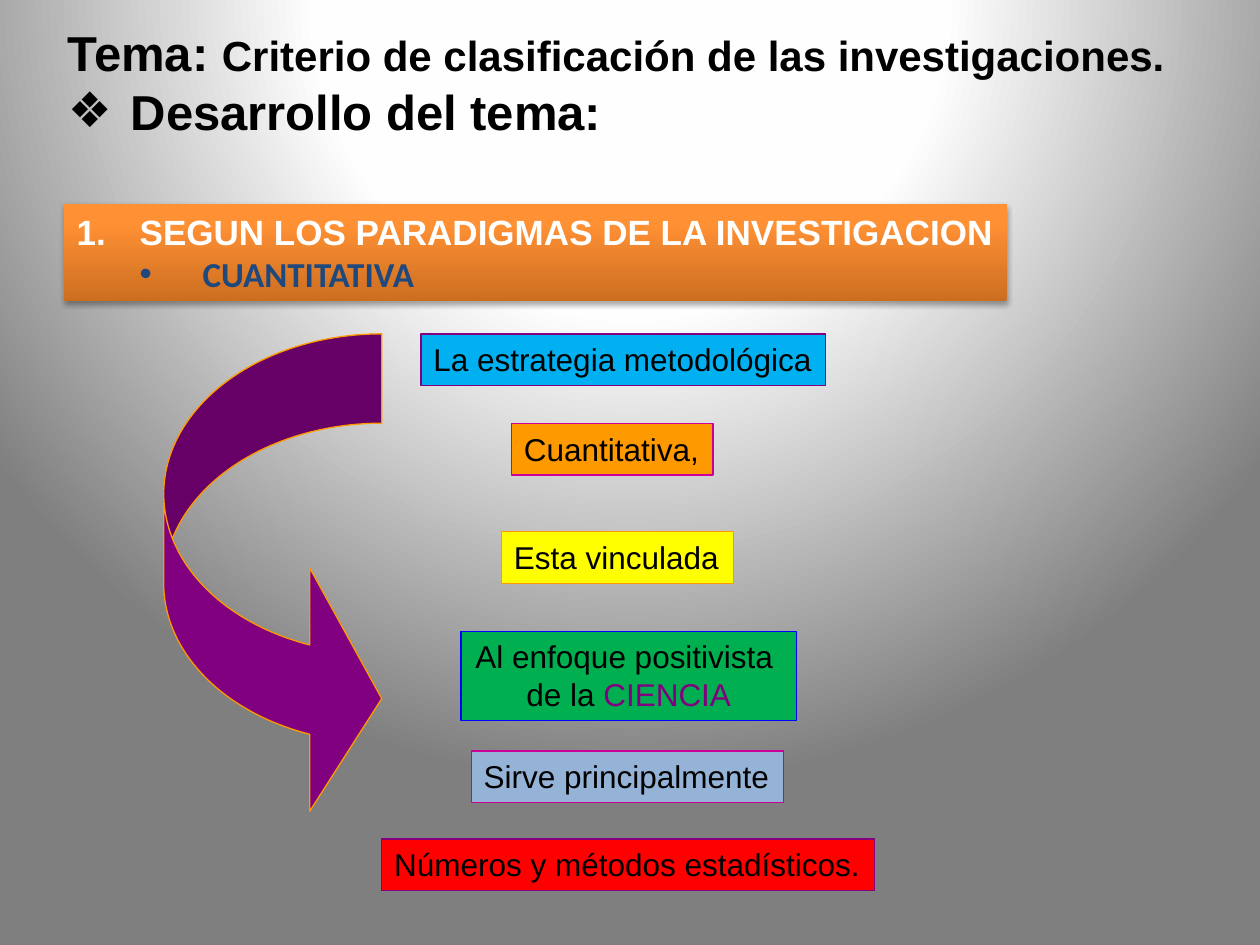
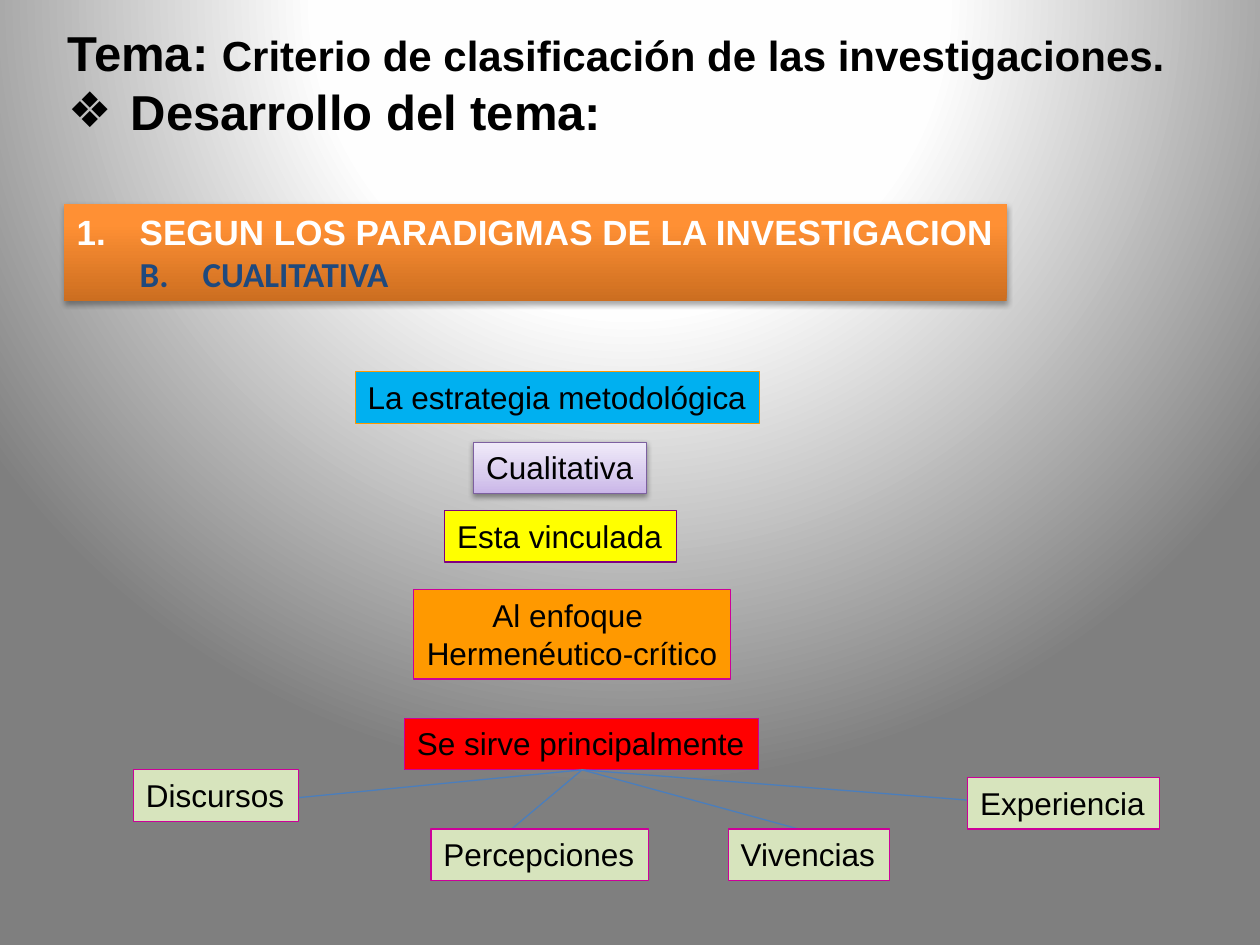
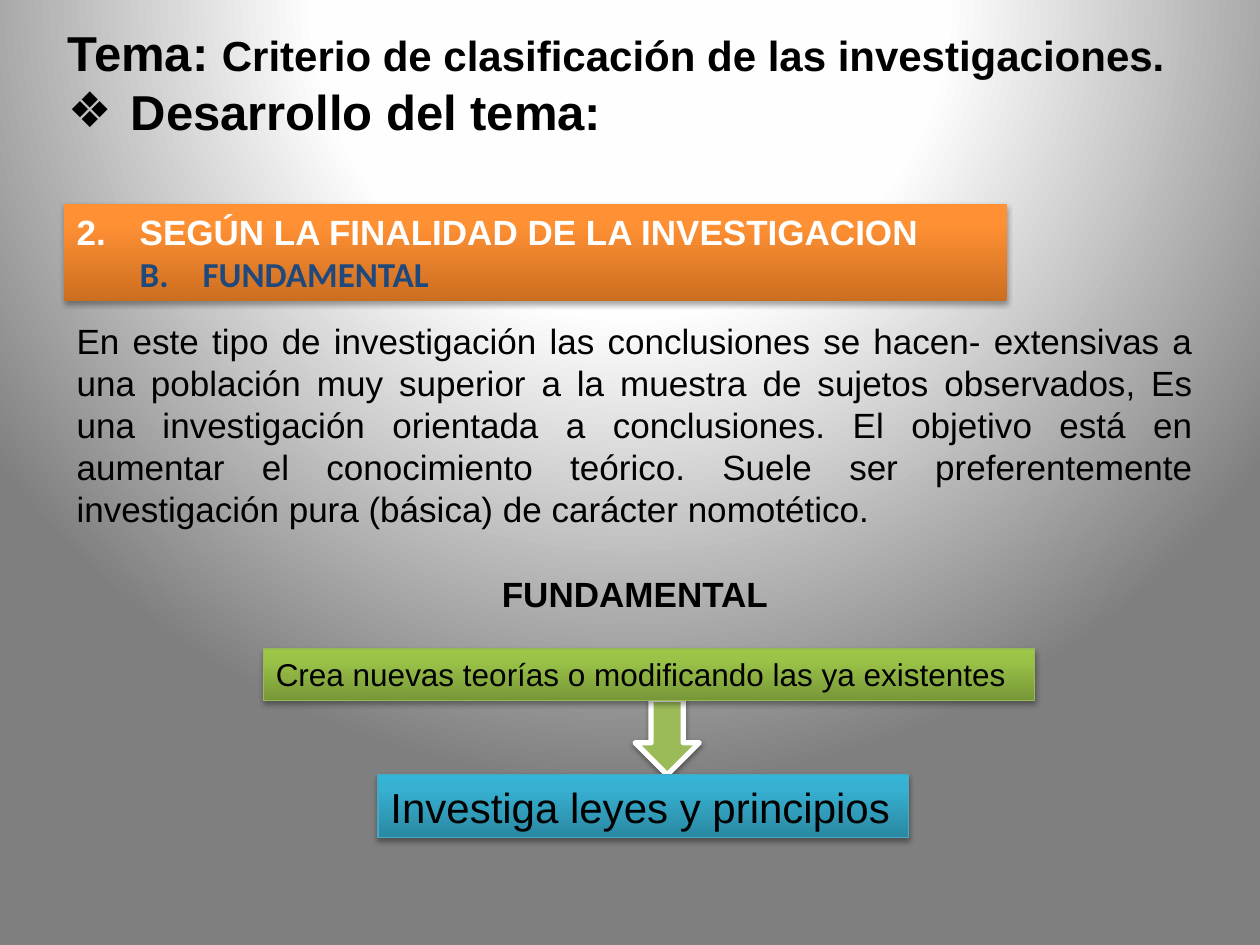
from dataclasses import dataclass

from lxml import etree
from pptx import Presentation
from pptx.dml.color import RGBColor
from pptx.enum.shapes import MSO_CONNECTOR, MSO_SHAPE
from pptx.enum.text import MSO_AUTO_SIZE, PP_ALIGN
from pptx.oxml.ns import qn
from pptx.util import Inches, Pt

LEFT, CENTER, JUSTIFY = PP_ALIGN.LEFT, PP_ALIGN.CENTER, PP_ALIGN.JUSTIFY
FIT_SHAPE = MSO_AUTO_SIZE.SHAPE_TO_FIT_TEXT
STRAIGHT = MSO_CONNECTOR.STRAIGHT
CURVED_ARROW, DOWN_ARROW = MSO_SHAPE.CURVED_RIGHT_ARROW, MSO_SHAPE.DOWN_ARROW


@dataclass(frozen=True)
class Theme:
    font: str = "Arial"
    accent_font: str = "Calibri"
    title: int = 28
    subtitle: int = 24
    body: int = 20
    label: int = 18
    black: str = "000000"
    white: str = "FFFFFF"
    navy: str = "1F497D"
    sky: str = "00B0F0"
    orange: str = "FF9900"
    yellow: str = "FFFF00"
    green: str = "00B050"
    steel: str = "95B3D7"
    red: str = "FF0000"
    purple: str = "800080"
    magenta: str = "CC0099"
    blue: str = "0000FF"
    pale_green: str = "D7E4BD"
    olive: str = "9BBB59"
    olive_edge: str = "98B955"
    teal_edge: str = "46AAC5"
    violet_edge: str = "7D60A0"
    connector: str = "4B7EBC"
    backdrop: tuple = ((0, "FFFFFF"), (40, "FEFEFE"), (100, "7F7F7F"))
    banner: tuple = ((0, "CC6E20"), (80, "FF9034"), (100, "FF9136"))
    lilac: tuple = ((0, "C9B5E8"), (35, "D8CBEE"), (100, "F0EAF9"))
    moss: tuple = ((0, "779737"), (80, "9BC348"), (100, "9DC746"))
    teal: tuple = ((0, "2A88A2"), (80, "37B1D2"), (100, "34B4D6"))


THEME = Theme()


def add_node(parent, tag, **attributes):
    values = {name: str(value) for name, value in attributes.items()}
    return etree.SubElement(parent, qn(tag), values)


def paint_gradient(fill, owner, stops, radial=False):
    fill.gradient()
    gradient = next(owner.iter(qn("a:gradFill")))
    for child in list(gradient):
        gradient.remove(child)
    stop_list = add_node(gradient, "a:gsLst")
    for position, color in stops:
        stop = add_node(stop_list, "a:gs", pos=position * 1000)
        add_node(stop, "a:srgbClr", val=color)
    if radial:
        circle = add_node(gradient, "a:path", path="circle")
        add_node(circle, "a:fillToRect", l=50000, t=-80000, r=50000, b=180000)
    else:
        add_node(gradient, "a:lin", ang=16200000, scaled=0)


def set_shadow(shape, opacity=35, distance=1.8):
    shape.shadow.inherit = False
    effects = shape.element.spPr.find(qn("a:effectLst"))
    shadow = add_node(effects, "a:outerShdw", blurRad=Pt(3.1), dist=Pt(distance),
                      dir=5400000, rotWithShape=0)
    color = add_node(shadow, "a:srgbClr", val=THEME.black)
    add_node(color, "a:alpha", val=opacity * 1000)


def style_shape(shape, fill, line=None, width=0.75):
    if isinstance(fill, tuple):
        paint_gradient(shape.fill, shape.element, fill)
    else:
        shape.fill.solid()
        shape.fill.fore_color.rgb = RGBColor.from_string(fill)
    if line:
        shape.line.color.rgb = RGBColor.from_string(line)
        shape.line.width = Pt(width)


def add_text_box(page, left, top, width, height, wrap=True):
    box = page.shapes.add_textbox(Inches(left), Inches(top), Inches(width), Inches(height))
    box.text_frame.word_wrap = wrap
    box.text_frame.auto_size = FIT_SHAPE
    return box


def add_para(frame, align=LEFT, level=0, before=0):
    para = frame.paragraphs[0]
    if para.runs:
        para = frame.add_paragraph()
    para.alignment = align
    para.level = level
    if before:
        para.space_before = Pt(before)
    return para


def add_bullet(para, indent, symbol=None, numbering=None, start=1):
    properties = para._p.get_or_add_pPr()
    properties.set("marL", str(Inches(indent)))
    properties.set("indent", str(Inches(-0.5)))
    if symbol:
        add_node(properties, "a:buFont", typeface=THEME.font)
        add_node(properties, "a:buChar", char=symbol)
    else:
        add_node(properties, "a:buFont", typeface="+mj-lt")
        add_node(properties, "a:buAutoNum", type=numbering, startAt=start)


def add_span(para, text, size=THEME.label, color=THEME.black, bold=False, font=THEME.font):
    span = para.add_run()
    span.text = text
    span.font.name = font
    span.font.size = Pt(size)
    span.font.bold = bold
    span.font.color.rgb = RGBColor.from_string(color)


def add_label(page, lines, left, top, width, fill, line, height=None, size=THEME.label):
    box = add_text_box(page, left, top, width, height or 0.11 + 0.3 * len(lines), wrap=False)
    style_shape(box, fill, line)
    for spans in lines:
        para = add_para(box.text_frame, CENTER if len(lines) > 1 else LEFT)
        for text, color in spans:
            add_span(para, text, size=size, color=color)
    return box


def plain(*texts):
    return [[(text, THEME.black)] for text in texts]


def add_arrow(page, kind, left, top, width, height, fill, line, weight):
    arrow = page.shapes.add_shape(kind, Inches(left), Inches(top), Inches(width), Inches(height))
    arrow.shadow.inherit = False
    style_shape(arrow, fill, line, weight)
    return arrow


def add_branch(page, start, end):
    branch = page.shapes.add_connector(STRAIGHT, *(Inches(value) for value in start + end))
    branch.line.color.rgb = RGBColor.from_string(THEME.connector)
    branch.line.width = Pt(0.75)
    add_node(branch.element.spPr, "a:effectLst")


def add_page(deck, number, section, topic, **topic_bullet):
    page = deck.slides.add_slide(deck.slide_layouts[6])
    paint_gradient(page.background.fill, page.element, THEME.backdrop, radial=True)

    heading = add_text_box(page, 0.44, 0.13, 9.36, 1.04).text_frame
    para = add_para(heading)
    add_span(para, "Tema: ", size=THEME.title, bold=True)
    add_span(para, "Criterio de clasificación de las investigaciones.",
             size=THEME.subtitle, bold=True)
    para = add_para(heading)
    add_bullet(para, 0.5, symbol="❖")
    add_span(para, "Desarrollo del tema:", size=THEME.title, bold=True)

    banner = add_text_box(page, 0.51, 1.62, 7.48, 0.77)
    style_shape(banner, THEME.banner)
    set_shadow(banner)
    para = add_para(banner.text_frame)
    add_bullet(para, 0.5, numbering="arabicPeriod", start=number)
    add_span(para, section, size=THEME.body, color=THEME.white, bold=True)
    para = add_para(banner.text_frame, level=1)
    add_bullet(para, 1, **topic_bullet)
    add_span(para, topic, size=THEME.body, color=THEME.navy, bold=True, font=THEME.accent_font)
    return page


def build_quantitative(deck):
    page = add_page(deck, 1, "SEGUN LOS PARADIGMAS DE LA INVESTIGACION", "CUANTITATIVA",
                    symbol="•")
    approach = plain("Al enfoque positivista ", "de la ")
    approach[1].append(("CIENCIA", THEME.purple))
    for label in (
        (plain("La estrategia metodológica"), 3.34, 2.65, 3.21, THEME.sky, THEME.purple),
        (plain("Cuantitativa,"), 4.06, 3.36, 1.6, THEME.orange, THEME.magenta),
        (plain("Esta vinculada"), 3.98, 4.22, 1.84, THEME.yellow, THEME.orange),
        (approach, 3.66, 5.01, 2.66, THEME.green, THEME.blue),
        (plain("Sirve principalmente"), 3.74, 5.96, 2.48, THEME.steel, THEME.magenta),
        (plain("Números y métodos estadísticos."), 3.03, 6.66, 3.91, THEME.red, THEME.purple),
    ):
        add_label(page, *label)
    arrow = add_arrow(page, CURVED_ARROW, 1.3, 2.65, 1.73, 3.86,
                      THEME.purple, THEME.orange, 0.75)
    for index, value in enumerate((0.41, 1.65, 0.33)):
        arrow.adjustments[index] = value


def build_qualitative(deck):
    page = add_page(deck, 1, "SEGUN LOS PARADIGMAS DE LA INVESTIGACION", "CUALITATIVA",
                    numbering="alphaUcPeriod", start=2)
    add_label(page, plain("La estrategia metodológica"), 2.82, 2.95, 3.21,
              THEME.sky, THEME.orange)
    strategy = add_label(page, plain("Cualitativa"), 3.76, 3.51, 1.37,
                         THEME.lilac, THEME.violet_edge)
    set_shadow(strategy, opacity=38, distance=1.6)
    for label in (
        (plain("Esta vinculada"), 3.53, 4.05, 1.84, THEME.yellow, THEME.purple),
        (plain("Al enfoque ", "Hermenéutico-crítico"), 3.28, 4.68, 2.52,
         THEME.orange, THEME.magenta),
        (plain("Se sirve principalmente"), 3.21, 5.7, 2.81, THEME.red, THEME.magenta),
    ):
        add_label(page, *label)

    for end in ((2.17, 6.35), (4.06, 6.58), (6.34, 6.58), (7.68, 6.35)):
        add_branch(page, (4.62, 6.11), end)
    for source, left, top, width in (
        ("Discursos", 1.06, 6.11, 1.31),
        ("Percepciones", 3.42, 6.58, 1.73),
        ("Vivencias", 5.78, 6.58, 1.28),
        ("Experiencia", 7.68, 6.17, 1.52),
    ):
        add_label(page, plain(source), left, top, width, THEME.pale_green, THEME.magenta)


def build_fundamental(deck):
    page = add_page(deck, 2, "SEGÚN LA FINALIDAD DE LA INVESTIGACION", "FUNDAMENTAL",
                    numbering="alphaUcPeriod", start=2)
    body = add_text_box(page, 0.51, 2.49, 9.06, 2.46).text_frame
    add_span(add_para(body, JUSTIFY),
             "En este tipo de investigación las conclusiones se hacen- extensivas a una "
             "población muy superior a la muestra de sujetos observados, Es una investigación "
             "orientada a conclusiones. El objetivo está en aumentar el conocimiento teórico. "
             "Suele ser preferentemente investigación pura (básica) de carácter nomotético.",
             size=THEME.body)
    add_span(add_para(body, CENTER, before=24), "FUNDAMENTAL", size=THEME.body, bold=True)

    arrow = add_arrow(page, DOWN_ARROW, 5.04, 5.55, 0.51, 0.6, THEME.olive, THEME.white, 3)
    set_shadow(arrow, opacity=38, distance=1.6)
    theory = add_label(page, plain("Crea nuevas teorías o modificando las ya existentes"),
                       2.09, 5.15, 6.12, THEME.moss, THEME.olive_edge)
    laws = add_label(page, plain("Investiga leyes y principios"), 3, 6.15, 4.21,
                     THEME.teal, THEME.teal_edge, height=0.5, size=THEME.subtitle)
    for box in (theory, laws):
        set_shadow(box)


def main():
    deck = Presentation()
    deck.slide_width, deck.slide_height = Inches(10), Inches(7.5)
    build_quantitative(deck)
    build_qualitative(deck)
    build_fundamental(deck)
    deck.save("out.pptx")


if __name__ == "__main__":
    main()
